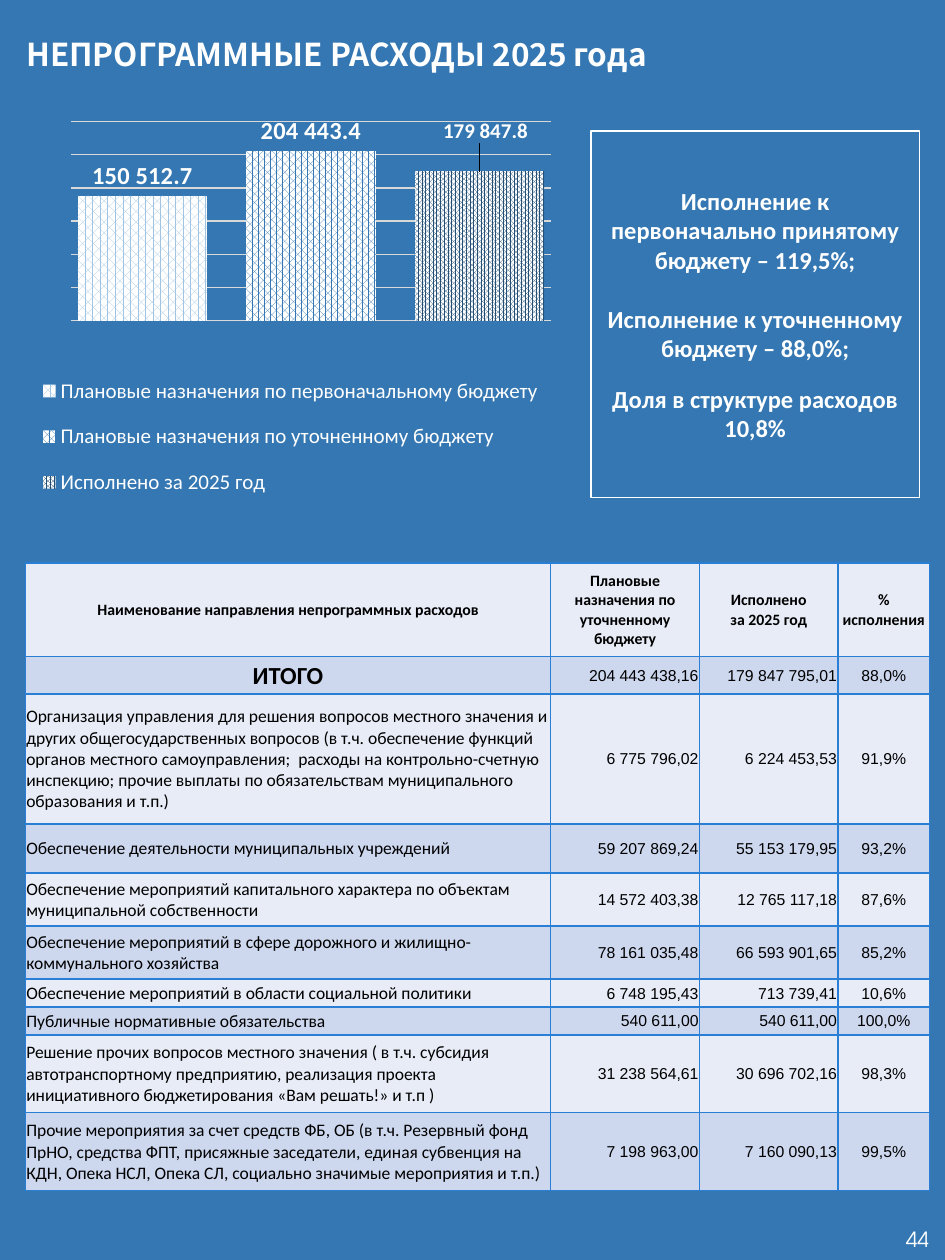
"""Build the slide on non-programme spending in 2025."""
import pptx
import pptx.chart.data
import pptx.dml.color
import pptx.enum.chart
import pptx.enum.dml
import pptx.enum.shapes
import pptx.enum.text
import pptx.oxml
import pptx.util

Cm = pptx.util.Cm
Pt = pptx.util.Pt
Align = pptx.enum.text.PP_ALIGN
Anchor = pptx.enum.text.MSO_ANCHOR
Pat = pptx.enum.dml.MSO_PATTERN
NS = ('xmlns:a="http://schemas.openxmlformats.org/drawingml/2006/main" '
      'xmlns:c="http://schemas.openxmlformats.org/drawingml/2006/chart" '
      'xmlns:c15="http://schemas.microsoft.com/office/drawing/2012/chart"')
NUM = r"#\ ##0.0"

BARS = [
    ("Плановые назначения по первоначальному бюджету", 150512.7,
     Pat.PERCENT_60, "A1C4E3", 14),
    ("Плановые назначения по уточненному бюджету", 204443.4,
     Pat.PERCENT_70, "3477B2", 14),
    ("Исполнено за 2025 год", 179847.8, Pat.PERCENT_80, "234F77", 12),
]
NOTES = [
    "Исполнение к первоначально принятому бюджету – 119,5%;",
    "Исполнение к уточненному бюджету – 88,0%;",
    "Доля в структуре расходов 10,8%",
]
HEAD = ["Наименование направления непрограммных расходов",
        "Плановые назначения по уточненному бюджету",
        "Исполнено\nза 2025 год", "% исполнения"]
ROWS = [
    ("ИТОГО", "204 443 438,16", "179 847 795,01", "88,0%"),
    ("Организация управления для решения вопросов местного значения и других "
     "общегосударственных вопросов (в т.ч. обеспечение функций органов местного "
     "самоуправления;  расходы на контрольно-счетную инспекцию; прочие выплаты по "
     "обязательствам муниципального образования и т.п.)",
     "6 775 796,02", "6 224 453,53", "91,9%"),
    ("Обеспечение деятельности муниципальных учреждений",
     "59 207 869,24", "55 153 179,95", "93,2%"),
    ("Обеспечение мероприятий капитального характера по объектам "
     "муниципальной собственности", "14 572 403,38", "12 765 117,18", "87,6%"),
    ("Обеспечение мероприятий в сфере дорожного и жилищно-коммунального хозяйства",
     "78 161 035,48", "66 593 901,65", "85,2%"),
    ("Обеспечение мероприятий в области социальной политики",
     "6 748 195,43", "713 739,41", "10,6%"),
    ("Публичные нормативные обязательства", "540 611,00", "540 611,00", "100,0%"),
    ("Решение прочих вопросов местного значения ( в т.ч. субсидия автотранспортному "
     "предприятию, реализация проекта инициативного бюджетирования "
     "«Вам решать!» и т.п )", "31 238 564,61", "30 696 702,16", "98,3%"),
    ("Прочие мероприятия за счет средств ФБ, ОБ (в т.ч. Резервный фонд ПрНО, "
     "средства ФПТ, присяжные заседатели, единая субвенция на КДН, Опека НСЛ, "
     "Опека СЛ, социально значимые мероприятия и т.п.)",
     "7 198 963,00", "7 160 090,13", "99,5%"),
]
WIDE = [10.59, 3, 2.79, 1.85]
HIGH = [1.88, 0.76, 2.62, 0.99, 1.07, 1.07, 0.56, 0.56, 1.57, 1.57]


def rgb(code):
    return pptx.dml.color.RGBColor.from_string(code)


def xml(text):
    tag, rest = text.split(">", 1)
    close = "/" if tag.endswith("/") else ""
    return pptx.oxml.parse_xml(f"{tag.rstrip('/')} {NS}{close}>{rest}")


def place(**keys):
    parts = "".join(f'<c:{key} val="{val}"/>' for key, val in keys.items())
    return xml(f"<c:layout><c:manualLayout>{parts}</c:manualLayout></c:layout>")


def style(font, face="Calibri", size=12, color="FFFFFF", bold=False):
    font.name, font.size, font.bold = face, Pt(size), bold
    font.color.rgb = rgb(color)


def write(frame, text, align=Align.LEFT, gaps=(0, 0, 0), **look):
    for i, line in enumerate(text.split("\n")):
        para = frame.paragraphs[0] if i == 0 else frame.add_paragraph()
        para.alignment = align
        if gaps[i]:
            para.space_before = Pt(gaps[i])
        run = para.add_run()
        run.text = line
        style(run.font, **look)


class Sheet:
    def __init__(self, deck, back):
        self.slide = deck.slides.add_slide(deck.slide_layouts[6])
        self.slide.background.fill.solid()
        self.slide.background.fill.fore_color.rgb = rgb(back)
        self.shapes = self.slide.shapes
        self.white, self.edge = "FFFFFF", "297FD5"
        self.bands = ["E8ECF7", "CDD8EF"]

    def label(self, box, text, inset=0.25, anchor=Anchor.TOP, **look):
        frame = self.shapes.add_textbox(*map(Cm, box)).text_frame
        frame.word_wrap = True
        frame.margin_left = Cm(inset)
        frame.vertical_anchor = anchor
        write(frame, text, **look)

    def panel(self, box, text, **look):
        rect = pptx.enum.shapes.MSO_SHAPE.RECTANGLE
        shape = self.shapes.add_shape(rect, *map(Cm, box))
        shape.shadow.inherit = False
        shape.fill.background()
        shape.line.color.rgb = rgb(self.white)
        shape.line.width = Pt(1)
        shape.text_frame.word_wrap = True
        shape.text_frame.vertical_anchor = Anchor.MIDDLE
        write(shape.text_frame, text, **look)

    def bars(self, box, items):
        data = pptx.chart.data.CategoryChartData(number_format=NUM)
        data.categories = ["1"]
        for name, value, *_ in items:
            data.add_series(name, [value])
        kind = pptx.enum.chart.XL_CHART_TYPE.COLUMN_CLUSTERED
        chart = self.shapes.add_chart(kind, *map(Cm, box), data).chart
        style(chart.font, size=10)
        chart.has_title = False
        axis = chart.value_axis
        axis.minimum_scale, axis.maximum_scale, axis.major_unit = 0, 240000, 40000
        axis.major_gridlines.format.line.color.rgb = rgb("D9D9D9")
        axis.major_gridlines.format.line.width = Pt(0.75)
        axis.visible = chart.category_axis.visible = False
        plot = chart.plots[0]
        plot.gap_width, plot.overlap, plot.vary_by_categories = 10, -30, False
        for series, (_, _, pat, color, size) in zip(plot.series, items):
            fill = series.format.fill
            fill.patterned()
            fill.pattern = pat
            fill.fore_color.rgb, fill.back_color.rgb = rgb(color), rgb(self.white)
            tags = series.data_labels
            tags.show_value = True
            tags.number_format, tags.number_format_is_linked = NUM, False
            tags.position = pptx.enum.chart.XL_LABEL_POSITION.OUTSIDE_END
            style(tags.font, size=size, bold=True)
        self.lift(plot.series[2], items[2][-1])
        chart.has_legend = True
        legend = chart.legend
        legend.position = pptx.enum.chart.XL_LEGEND_POSITION.BOTTOM
        legend.include_in_layout = False
        style(legend.font, size=12)
        for old in chart._chartSpace.xpath("c:chart/c:plotArea/c:layout | .//c:legend/c:layout"):
            old.getparent().remove(old)
        legend._element.xpath("c:legendPos")[0].addnext(
            place(xMode="edge", yMode="edge", x=0.12, y=0.59, w=0.87, h=0.34))
        chart._chartSpace.xpath("c:chart/c:plotArea")[0].insert(
            0, place(layoutTarget="inner", xMode="edge", yMode="edge",
                     x=0.18, y=0.08, w=0.82, h=0.43))

    def lift(self, series, size):
        tag = series.points[0].data_label
        style(tag.font, size=size, bold=True)
        tag.position = pptx.enum.chart.XL_LABEL_POSITION.OUTSIDE_END
        tag._dLbl.xpath("c:idx")[0].addnext(place(x=0.01, y=-0.05))
        series.data_labels._element.append(xml(
            '<c:extLst><c:ext uri="{CE6537A1-D6FC-4f65-9D91-7224C49458BB}">'
            '<c15:showLeaderLines val="1"/></c:ext></c:extLst>'))

    def cell(self, cell, text, band, **look):
        cell.fill.solid()
        cell.fill.fore_color.rgb = rgb(band)
        cell.vertical_anchor = Anchor.MIDDLE
        cell.margin_left = cell.margin_right = cell.margin_top = Cm(0.02)
        cell.margin_bottom = 0
        write(cell.text_frame, text, color="000000", **look)
        props = cell._tc.get_or_add_tcPr()
        for i, side in enumerate("LRTB"):
            props.insert(i, xml(
                f'<a:ln{side} w="12700"><a:solidFill><a:srgbClr val="{self.edge}"/>'
                f'</a:solidFill></a:ln{side}>'))

    def table(self, left, top, rows):
        size = left, top, sum(WIDE), sum(HIGH)
        grid = self.shapes.add_table(len(rows), len(WIDE), *map(Cm, size)).table
        grid.first_row = grid.horz_banding = False
        for col, wide in zip(grid.columns, WIDE):
            col.width = Cm(wide)
        for r, row in enumerate(rows):
            grid.rows[r].height = Cm(HIGH[r])
            for c, text in enumerate(row):
                if r == 0 or (r == 1 and c == 0):
                    look = dict(align=Align.CENTER, size=14 if r else 9, bold=True)
                elif c == 0:
                    look = dict(size=10)
                else:
                    side = Align.CENTER if c == 3 else Align.RIGHT
                    look = dict(align=side, size=9, face="Arial")
                self.cell(grid.cell(r, c), text, self.bands[r % 2], **look)


def main():
    deck = pptx.Presentation()
    deck.slide_width, deck.slide_height = Cm(19.05), Cm(25.4)
    sheet = Sheet(deck, "3477B2")
    sheet.label((0.1, 0.58, 19.05, 1.04), "НЕПРОГРАММНЫЕ РАСХОДЫ 2025 года",
                inset=0.43, face="Noto Sans CJK SC", size=18, bold=True)
    sheet.label((14.53, 24.31, 4.45, 1.35), "44", anchor=Anchor.MIDDLE,
                align=Align.RIGHT, face="TeX Gyre Adventor", size=12)
    sheet.bars((-0.69, 1.7, 11.81, 9.35), BARS)
    sheet.panel((11.91, 2.64, 6.63, 7.39), "\n".join(NOTES), align=Align.CENTER,
                gaps=(0, 17, 12), size=14, bold=True)
    sheet.table(0.51, 11.35, [HEAD, *ROWS])
    deck.save("out.pptx")


if __name__ == "__main__":
    main()
